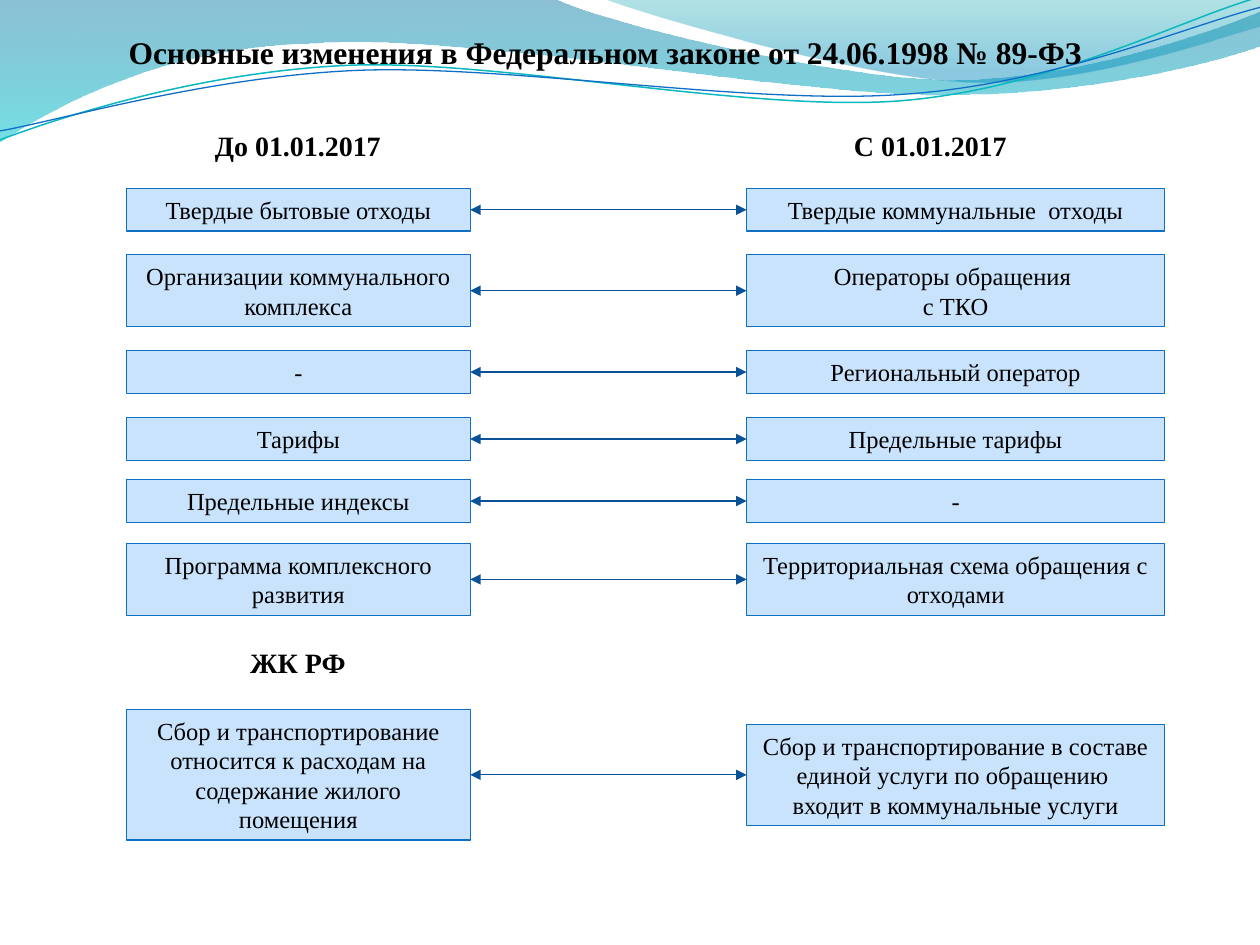
"""Build the slide comparing waste-law terms before and after 01.01.2017."""
from lxml.etree import Element, SubElement
from pptx import Presentation
from pptx.dml.color import RGBColor
from pptx.enum.shapes import MSO_CONNECTOR, MSO_SHAPE
from pptx.enum.text import MSO_ANCHOR, MSO_AUTO_SIZE, PP_ALIGN
from pptx.oxml.ns import qn
from pptx.util import Cm, Pt

COLORS = {
    "text": "000000", "heading": "FFFFFF", "box": "C8E3FB",
    "border": "0F6FC6", "arrow": "095295", "teal": "0AB8BF",
    "wide_top": "0074A1", "wide_bottom": "00C6CF",
    "right_top": "00A1A9", "right_bottom": "008BBF",
}
RGB = {part: RGBColor.from_string(value) for part, value in COLORS.items()}

prs = Presentation()
prs.slide_width, prs.slide_height = Cm(25.4), Cm(19.05)
slide = prs.slides.add_slide(prs.slide_layouts[6])
shapes = slide.shapes


def add_wave(start, steps, closed):
    """Draw straight steps (one point) and Bezier steps (three points) in cm."""
    builder = shapes.build_freeform(Cm(start[0]), Cm(start[1]))
    builder.add_line_segments([(Cm(x), Cm(y)) for step in steps for x, y in step], close=closed)
    wave = builder.convert_to_shape()
    wave.shadow.inherit = False
    lines = iter(list(wave.element.spPr.iter(qn("a:lnTo"))))
    for step in steps:
        group = [next(lines) for _ in step]
        if len(group) == 3:
            curve = Element(qn("a:cubicBezTo"))
            group[0].addprevious(curve)
            for line in group:
                curve.append(line[0])
                line.getparent().remove(line)
    return wave


def write_text(label, text, size, bold, anchor):
    """Write centred text into a label that fits its height to it."""
    frame = label.text_frame
    frame.text = text
    frame.word_wrap = True
    frame.auto_size = MSO_AUTO_SIZE.SHAPE_TO_FIT_TEXT
    frame.vertical_anchor = anchor
    for paragraph in frame.paragraphs:
        paragraph.alignment = PP_ALIGN.CENTER
        paragraph.font.name = "Times New Roman"
        paragraph.font.size = Pt(size)
        paragraph.font.bold = bold
        paragraph.font.color.rgb = RGB["text"]


bands = [
    ((0, 0), [
        ((11.18, -0.03),),
        ((12.09, 0.43), (16.87, 1.6), (19.25, 1.6)),
        ((21.67, 1.6), (24.33, 0.66), (25.4, 0.23)),
        ((25.43, 0.91),),
        ((24.97, 1.12), (22.1, 1.93), (18.95, 1.91)),
        ((15.8, 1.91), (9.7, 0.71), (6.53, 0.86)),
        ((3.28, 0.91), (1.17, 2.11), (-0.03, 2.87)),
    ], [("wide_top", 0, 45), ("wide_bottom", 1, 55)]),
    ((12.17, -0.03), [
        ((12.93, 0.28), (17.32, 1.57), (19.53, 1.65)),
        ((21.74, 1.75), (24.41, 0.81), (25.4, 0.53)),
        ((25.4, 0),),
    ], [("right_top", 0, 30), ("right_bottom", 0.8, 45)]),
]
for start, steps, stops in bands:
    band = add_wave(start, steps, True)
    band.line.fill.background()
    band.fill.gradient()
    band.fill.gradient_angle = 270
    for stop, (color, position, _) in zip(band.fill.gradient_stops, stops):
        stop.position = position
        stop.color.rgb = RGB[color]
    tints = band.element.spPr.iter(qn("a:srgbClr"))
    for tint, (_, _, opacity) in zip(list(tints), stops):
        SubElement(tint, qn("a:alpha"), val=str(opacity * 1000))

strands = [
    ((-0.05, 2.22), [
        ((1.19, 1.82), (4.02, 1.04), (7.05, 1.05)),
        ((10.05, 1.07), (15.02, 2.37), (18.08, 2.29)),
        ((21.13, 2.2), (23.86, 0.91), (25.41, 0.55)),
    ], "teal", 0.85),
    ((-0.04, 2.04), [
        ((1.16, 1.89), (4.17, 1.15), (7.2, 1.16)),
        ((10.25, 1.18), (15.13, 2.25), (18.19, 2.16)),
        ((21.21, 2.1), (23.93, 1.06), (25.45, 0.75)),
    ], "border", 0.75),
]
for start, steps, color, weight in strands:
    strand = add_wave(start, steps, False)
    strand.rotation = 357.3
    strand.fill.background()
    strand.line.color.rgb = RGB[color]
    strand.line.width = Pt(weight)

title = shapes.add_textbox(Cm(0), Cm(0.55), Cm(24.41), Cm(1.02))
write_text(title, "Основные изменения в Федеральном законе от 24.06.1998 № 89-ФЗ",
           18, True, MSO_ANCHOR.TOP)

headings = [(3.06, 2.46, "До 01.01.2017"), (15.81, 2.46, "С 01.01.2017"), (3.06, 12.89, "ЖК РФ")]
for left, top, text in headings:
    heading = shapes.add_shape(MSO_SHAPE.RECTANGLE, Cm(left), Cm(top), Cm(5.89), Cm(0.94))
    heading.shadow.inherit = False
    heading.fill.solid()
    heading.fill.fore_color.rgb = RGB["heading"]
    heading.line.fill.background()
    write_text(heading, text, 16, True, MSO_ANCHOR.TOP)

columns = [(2.55, 6.93), (15.05, 8.43)]
rows = [
    (4.23, ("Твердые бытовые отходы", 1), ("Твердые коммунальные  отходы", 1)),
    (5.86, ("Организации коммунального комплекса", 2), ("Операторы обращения \nс ТКО", 2)),
    (7.5, ("-", 1), ("Региональный оператор", 1)),
    (8.85, ("Тарифы", 1), ("Предельные тарифы", 1)),
    (10.1, ("Предельные индексы", 1), ("-", 1)),
    (11.68, ("Программа комплексного развития", 2),
     ("Территориальная схема обращения с отходами", 2)),
    (15.62, ("Сбор и транспортирование относится к расходам на содержание жилого помещения", 4),
     ("Сбор и транспортирование в составе единой услуги по обращению "
      "\vвходит в коммунальные услуги", 3)),
]
for middle, *terms in rows:
    pair = []
    for (left, width), (term, line_count) in zip(columns, terms):
        height = 0.27 + 0.59 * line_count
        box = shapes.add_shape(MSO_SHAPE.RECTANGLE, Cm(left), Cm(middle - height / 2),
                               Cm(width), Cm(height))
        box.shadow.inherit = False
        box.fill.solid()
        box.fill.fore_color.rgb = RGB["box"]
        box.line.color.rgb = RGB["border"]
        box.line.width = Pt(0.75)
        write_text(box, term, 14, False, MSO_ANCHOR.MIDDLE)
        pair.append(box)
    before, after = pair
    arrow = shapes.add_connector(MSO_CONNECTOR.STRAIGHT, Cm(9.48), Cm(middle),
                                 Cm(15.05), Cm(middle))
    arrow.begin_connect(before, 3)
    arrow.end_connect(after, 1)
    arrow.line.color.rgb = RGB["arrow"]
    arrow.line.width = Pt(0.75)
    outline = arrow.element.spPr.find(qn("a:ln"))
    for end in ("a:headEnd", "a:tailEnd"):
        SubElement(outline, qn(end), type="triangle")
    SubElement(arrow.element.spPr, qn("a:effectLst"))

prs.save("out.pptx")
